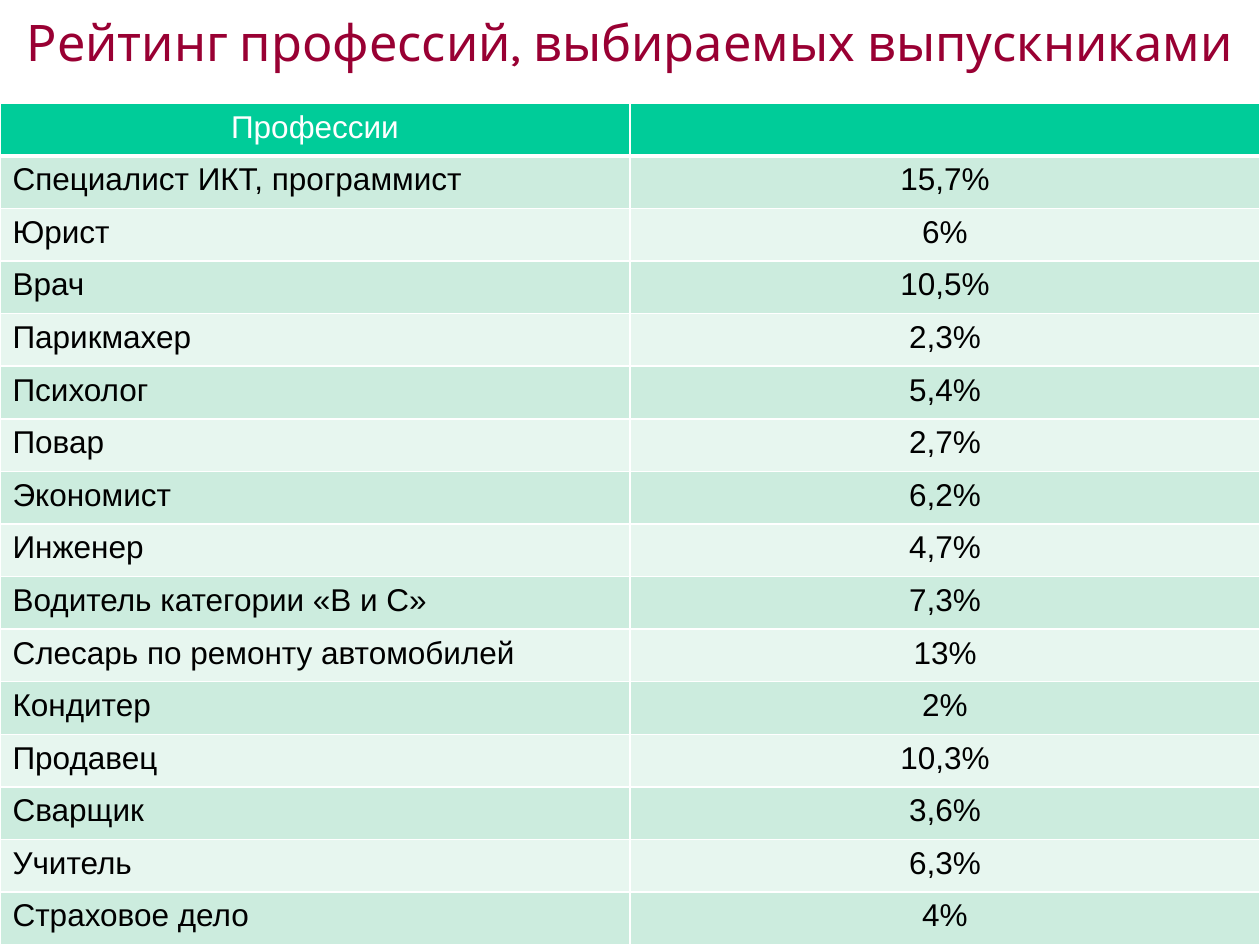
import pptx
import pptx.util
import pptx.dml.color
import pptx.enum.text
from dataclasses import dataclass
from lxml import etree
from pptx.oxml.ns import qn
from pptx.util import Inches


@dataclass(frozen=True)
class Theme:
    title: str = "990033"
    header: str = "00CC99"
    bands: tuple = ("CCECDE", "E7F6EF")
    white: str = "FFFFFF"
    text: str = "000000"
    title_font: str = "Karla"
    body_font: str = "Arial"
    title_size: float = 28.8
    body_size: float = 18


THEME = Theme()
LEFT = pptx.enum.text.PP_ALIGN.LEFT
CENTER = pptx.enum.text.PP_ALIGN.CENTER

HEADER = ("Профессии", "")
PROFESSIONS = [
    ("Специалист ИКТ, программист", "15,7%"),
    ("Юрист", "6%"),
    ("Врач", "10,5%"),
    ("Парикмахер", "2,3%"),
    ("Психолог", "5,4%"),
    ("Повар", "2,7%"),
    ("Экономист", "6,2%"),
    ("Инженер", "4,7%"),
    ("Водитель категории «В и С»", "7,3%"),
    ("Слесарь по ремонту автомобилей", "13%"),
    ("Кондитер", "2%"),
    ("Продавец", "10,3%"),
    ("Сварщик", "3,6%"),
    ("Учитель", "6,3%"),
    ("Страховое дело", "4%"),
]


def rgb(color):
    return pptx.dml.color.RGBColor.from_string(color)


def write(tf, text, *, size=THEME.body_size, font=THEME.body_font,
          color=THEME.text, align=LEFT):
    p = tf.paragraphs[0]
    p.alignment = align
    p.font.size = pptx.util.Pt(size)
    if text:
        r = p.add_run()
        r.text = text
        r.font.size = pptx.util.Pt(size)
        r.font.name = font
        r.font.bold = False
        r.font.color.rgb = rgb(color)


def style_cell(cell, fill, bottom=1):
    """Draw white borders, widths in points, and fill the cell."""
    tcPr = cell._tc.get_or_add_tcPr()
    for side, width in (("L", 1), ("R", 1), ("T", 1), ("B", bottom)):
        ln = etree.SubElement(tcPr, qn(f"a:ln{side}"), w=str(pptx.util.Pt(width)))
        solid = etree.SubElement(ln, qn("a:solidFill"))
        etree.SubElement(solid, qn("a:srgbClr"), val=THEME.white)
    cell.fill.solid()
    cell.fill.fore_color.rgb = rgb(fill)


def add_title(s, text, left, top, width, height):
    tf = s.shapes.add_textbox(left, top, width, height).text_frame
    tf.word_wrap = True
    tf.vertical_anchor = pptx.enum.text.MSO_ANCHOR.MIDDLE
    write(tf, text, size=THEME.title_size, font=THEME.title_font,
          color=THEME.title, align=CENTER)


def add_rating_table(s, header, rows, left, top, width, height):
    n_rows = len(rows) + 1
    table = s.shapes.add_table(n_rows, len(header), left, top, width, height).table
    for column in table.columns:
        column.width = width // len(header)
    for row in table.rows:
        row.height = height // n_rows

    for j, text in enumerate(header):
        cell = table.cell(0, j)
        style_cell(cell, THEME.header, bottom=3)
        write(cell.text_frame, text, color=THEME.white, align=CENTER)

    for i, values in enumerate(rows):
        for j, text in enumerate(values):
            cell = table.cell(i + 1, j)
            style_cell(cell, THEME.bands[i % 2])
            write(cell.text_frame, text, align=CENTER if j else LEFT)


def main():
    prs = pptx.Presentation()
    prs.slide_width, prs.slide_height = Inches(10), Inches(7.5)
    s = prs.slides.add_slide(prs.slide_layouts[6])
    add_title(s, "Рейтинг профессий, выбираемых выпускниками",
              Inches(0), Inches(-0.11), Inches(10), Inches(0.88))
    add_rating_table(s, HEADER, PROFESSIONS,
                     Inches(0), Inches(0.82), Inches(10), Inches(6.68))
    prs.save("out.pptx")


if __name__ == "__main__":
    main()
